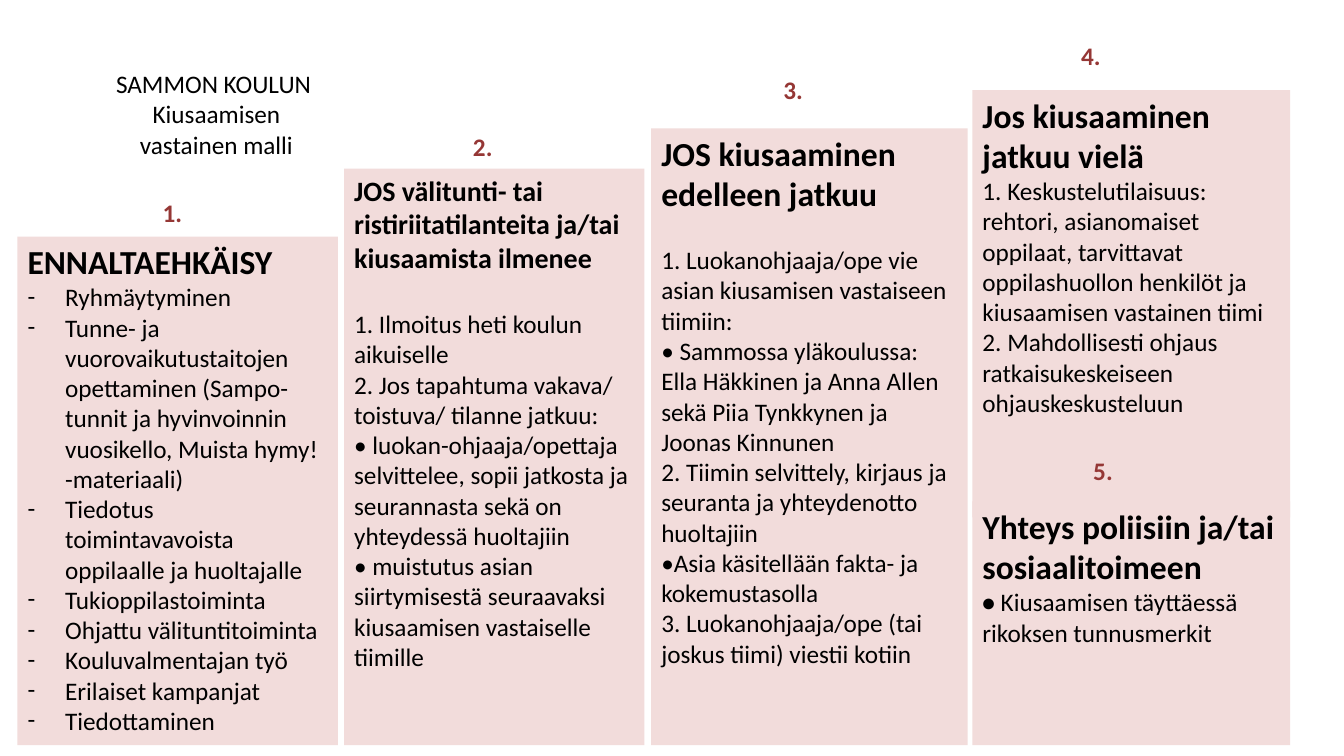
"""Build the four-step anti-bullying model slide."""
import dataclasses

import lxml.etree
import pptx
import pptx.dml.color
import pptx.enum.shapes
import pptx.enum.text
import pptx.oxml.ns
import pptx.util

Inches = pptx.util.Inches
ALIGN = pptx.enum.text.PP_ALIGN


@dataclasses.dataclass(frozen=True)
class Theme:
    """Colours, font and type sizes."""
    font: str = "Calibri"
    panel: str = "F2DCDB"
    text: str = "000000"
    number: str = "953735"
    heading: int = 36
    subheading: int = 30
    body: int = 27


class StepSlide:
    """Holds the theme and the current slide."""

    def __init__(self, s, theme):
        """Keep the slide and its style."""
        self.s = s
        self.theme = theme

    def frame(self, sp, margins=None):
        """Prepare a wrapped, top-anchored text frame."""
        tf = sp.text_frame
        tf.word_wrap = True
        tf.auto_size = pptx.enum.text.MSO_AUTO_SIZE.NONE
        tf.vertical_anchor = pptx.enum.text.MSO_ANCHOR.TOP
        if margins:
            tf.margin_left = tf.margin_right = Inches(margins[0])
            tf.margin_top = tf.margin_bottom = Inches(margins[1])
        return tf

    def run(self, p, text, size, color, bold=False):
        """Add one styled run."""
        r = p.add_run()
        r.text = text
        r.font.name = self.theme.font
        r.font.size = pptx.util.Pt(size)
        r.font.bold = bold
        r.font.color.rgb = pptx.dml.color.RGBColor.from_string(color)

    def dash(self, p):
        """Give a paragraph a hanging dash."""
        pPr = p._p.get_or_add_pPr()
        pPr.set("marL", str(Inches(0.56)))
        pPr.set("indent", str(-Inches(0.56)))
        for tag, name, value in (("a:buFont", "typeface", self.theme.font),
                                 ("a:buChar", "char", "-")):
            lxml.etree.SubElement(pPr, pptx.oxml.ns.qn(tag)).set(name, value)

    def panel(self, box, title, lines, size, gap=0, dashed=False):
        """Add a filled panel with a bold title and body lines."""
        sp = self.s.shapes.add_shape(
            pptx.enum.shapes.MSO_SHAPE.RECTANGLE, *map(Inches, box))
        sp.shadow.inherit = False
        sp.fill.solid()
        sp.fill.fore_color.rgb = pptx.dml.color.RGBColor.from_string(self.theme.panel)
        sp.line.fill.background()
        tf = self.frame(sp, (0.15, 0.07))
        p = tf.paragraphs[0]
        p.alignment = ALIGN.LEFT
        self.run(p, title, size, self.theme.text, True)
        for i, line in enumerate(lines):
            p = tf.add_paragraph()
            p.alignment = ALIGN.LEFT
            if dashed:
                self.dash(p)
            if i == 0 and gap:
                p.space_before = pptx.util.Pt(gap)
            for text, bold in [(line, False)] if isinstance(line, str) else line:
                self.run(p, text, self.theme.body, self.theme.text, bold)

    def label(self, box, lines, color, bold=False, align=ALIGN.LEFT):
        """Add a plain text box."""
        tf = self.frame(self.s.shapes.add_textbox(*map(Inches, box)))
        for i, line in enumerate(lines):
            p = tf.add_paragraph() if i else tf.paragraphs[0]
            p.alignment = align
            self.run(p, line, self.theme.body, color, bold)


def main():
    """Build and save the slide."""
    prs = pptx.Presentation()
    prs.slide_width, prs.slide_height = Inches(20), Inches(11.25)
    theme = Theme()
    slide = StepSlide(prs.slides.add_slide(prs.slide_layouts[6]), theme)

    bottom = 11.09
    slide.panel((0.26, 3.52, 4.77, bottom - 3.52), "ENNALTAEHKÄISY", [
        "Ryhmäytyminen",
        "Tunne- ja vuorovaikutustaitojen opettaminen (Sampo-tunnit ja "
        "hyvinvoinnin vuosikello, Muista hymy! -materiaali)",
        "Tiedotus toimintavavoista oppilaalle ja huoltajalle",
        "Tukioppilastoiminta",
        "Ohjattu välituntitoiminta",
        "Kouluvalmentajan työ",
        "Erilaiset kampanjat",
        "Tiedottaminen",
    ], theme.heading, dashed=True)
    slide.panel(
        (5.12, 2.51, 4.47, bottom - 2.51),
        "JOS välitunti- tai ristiriitatilanteita ja/tai kiusaamista ilmenee", [
            "1. Ilmoitus heti koulun aikuiselle",
            "2. Jos tapahtuma vakava/ toistuva/ tilanne jatkuu:",
            "• luokan-ohjaaja/opettaja selvittelee, sopii jatkosta ja "
            "seurannasta sekä on yhteydessä huoltajiin",
            "• muistutus asian siirtymisestä seuraavaksi kiusaamisen "
            "vastaiselle tiimille",
        ], theme.subheading, gap=36.6)
    slide.panel(
        (9.69, 1.91, 4.71, bottom - 1.91), "JOS kiusaaminen edelleen jatkuu", [
            "1. Luokanohjaaja/ope vie asian kiusamisen vastaiseen tiimiin:",
            "• Sammossa yläkoulussa:",
            "Ella Häkkinen ja Anna Allen sekä Piia Tynkkynen ja Joonas Kinnunen",
            "2. Tiimin selvittely, kirjaus ja seuranta ja yhteydenotto huoltajiin",
            "•Asia käsitellään fakta- ja kokemustasolla",
            "3. Luokanohjaaja/ope (tai joskus tiimi) viestii kotiin",
        ], theme.heading, gap=33)
    slide.panel((14.47, 1.34, 4.73, 6.36), "Jos kiusaaminen jatkuu vielä", [
        "1. Keskustelutilaisuus: rehtori, asianomaiset oppilaat, tarvittavat "
        "oppilashuollon henkilöt ja kiusaamisen vastainen tiimi",
        "2. Mahdollisesti ohjaus ratkaisukeskeiseen ohjauskeskusteluun",
    ], theme.heading)
    slide.panel(
        (14.47, 7.46, 4.73, bottom - 7.46), "Yhteys poliisiin ja/tai sosiaalitoimeen",
        [[("• ", True), ("Kiusaamisen täyttäessä rikoksen tunnusmerkit", False)]],
        theme.heading)

    slide.label((1.5, 0.97, 3.44, 1.46),
                ["SAMMON KOULUN ", "Kiusaamisen vastainen malli"],
                theme.text, align=ALIGN.CENTER)
    numbers = [(2.32, 2.88), (6.94, 1.9), (11.56, 1.05), (15.99, 0.55), (16.17, 6.72)]
    for n, (left, top) in enumerate(numbers, 1):
        slide.label((left, top, 1.08, 0.56), [f"{n}."], theme.number, bold=True)

    prs.save("out.pptx")


if __name__ == "__main__":
    main()
